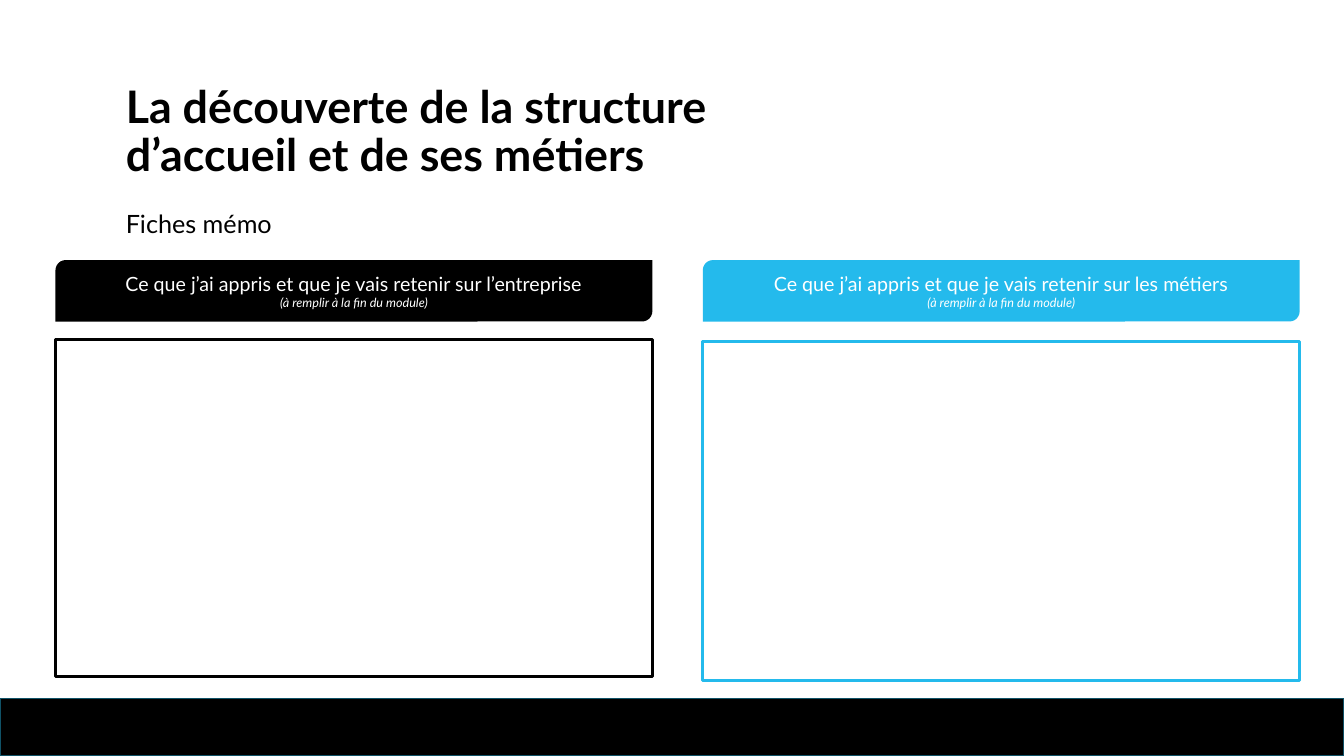
from dataclasses import dataclass

from pptx import Presentation
from pptx.dml.color import RGBColor
from pptx.enum.shapes import MSO_SHAPE
from pptx.enum.text import MSO_ANCHOR, PP_ALIGN
from pptx.util import Inches, Pt

RECTANGLE = MSO_SHAPE.RECTANGLE
DIAGONAL_ROUNDED = MSO_SHAPE.ROUND_2_DIAG_RECTANGLE
MIDDLE = MSO_ANCHOR.MIDDLE
CENTER = PP_ALIGN.CENTER


@dataclass(frozen=True)
class Theme:
    font: str = "Lato"
    black: RGBColor = RGBColor(0x00, 0x00, 0x00)
    white: RGBColor = RGBColor(0xFF, 0xFF, 0xFF)
    cyan: RGBColor = RGBColor(0x24, 0xBA, 0xEC)
    footer_edge: RGBColor = RGBColor(0x10, 0x52, 0x67)
    title_size: int = 32
    subtitle_size: int = 18
    header_size: int = 14
    hint_size: int = 9
    frame_width: float = 2.25


THEME = Theme()
MEMO_WIDTH = 5.92
HINT = "(à remplir à la fin du module)"


def style_paragraph(paragraph, text, size, color, bold=False, italic=False):
    paragraph.text = text
    font = paragraph.font
    font.name = THEME.font
    font.size = Pt(size)
    font.color.rgb = color
    font.bold = bold
    font.italic = italic


def add_heading(slide, box, text, size, bold=False):
    frame = slide.shapes.add_textbox(*map(Inches, box)).text_frame
    frame.word_wrap = True
    paragraph = frame.paragraphs[0]
    paragraph.line_spacing = 0.9
    style_paragraph(paragraph, text, size, THEME.black, bold)


def add_panel(slide, kind, box, fill, edge=None, edge_width=1):
    panel = slide.shapes.add_shape(kind, *map(Inches, box))
    panel.shadow.inherit = False
    panel.fill.solid()
    panel.fill.fore_color.rgb = fill
    if edge is None:
        panel.line.fill.background()
    else:
        panel.line.color.rgb = edge
        panel.line.width = Pt(edge_width)
    return panel


def add_memo(slide, left, topic, color, frame_top, frame_height):
    """Add a coloured header and the empty frame to be filled in below it."""
    header = add_panel(slide, DIAGONAL_ROUNDED, (left, 2.58, MEMO_WIDTH, 0.61), color)
    text = header.text_frame
    text.word_wrap = True
    text.vertical_anchor = MIDDLE
    question, hint = text.paragraphs[0], text.add_paragraph()
    question.alignment = hint.alignment = CENTER
    style_paragraph(question, f"Ce que j’ai appris et que je vais retenir sur {topic}",
                    THEME.header_size, THEME.white)
    style_paragraph(hint, HINT, THEME.hint_size, THEME.white, italic=True)
    add_panel(slide, RECTANGLE, (left, frame_top, MEMO_WIDTH, frame_height),
              THEME.white, color, THEME.frame_width)


def main():
    presentation = Presentation()
    presentation.slide_width = Inches(13.33)
    presentation.slide_height = Inches(7.5)
    slide = presentation.slides.add_slide(presentation.slide_layouts[6])

    add_panel(slide, RECTANGLE, (0, 6.93, 13.33, 0.57), THEME.black, THEME.footer_edge)
    add_heading(slide, (1.15, 2.05, 3.8, 0.66), "Fiches mémo", THEME.subtitle_size)
    add_heading(slide, (1.15, 0.79, 6.48, 1.09),
                "La découverte de la structure d’accueil et de ses métiers",
                THEME.title_size, bold=True)
    add_memo(slide, 0.55, "l’entreprise", THEME.black, 3.37, 3.34)
    add_memo(slide, 6.97, "les métiers", THEME.cyan, 3.39, 3.36)

    presentation.save("out.pptx")


if __name__ == "__main__":
    main()
